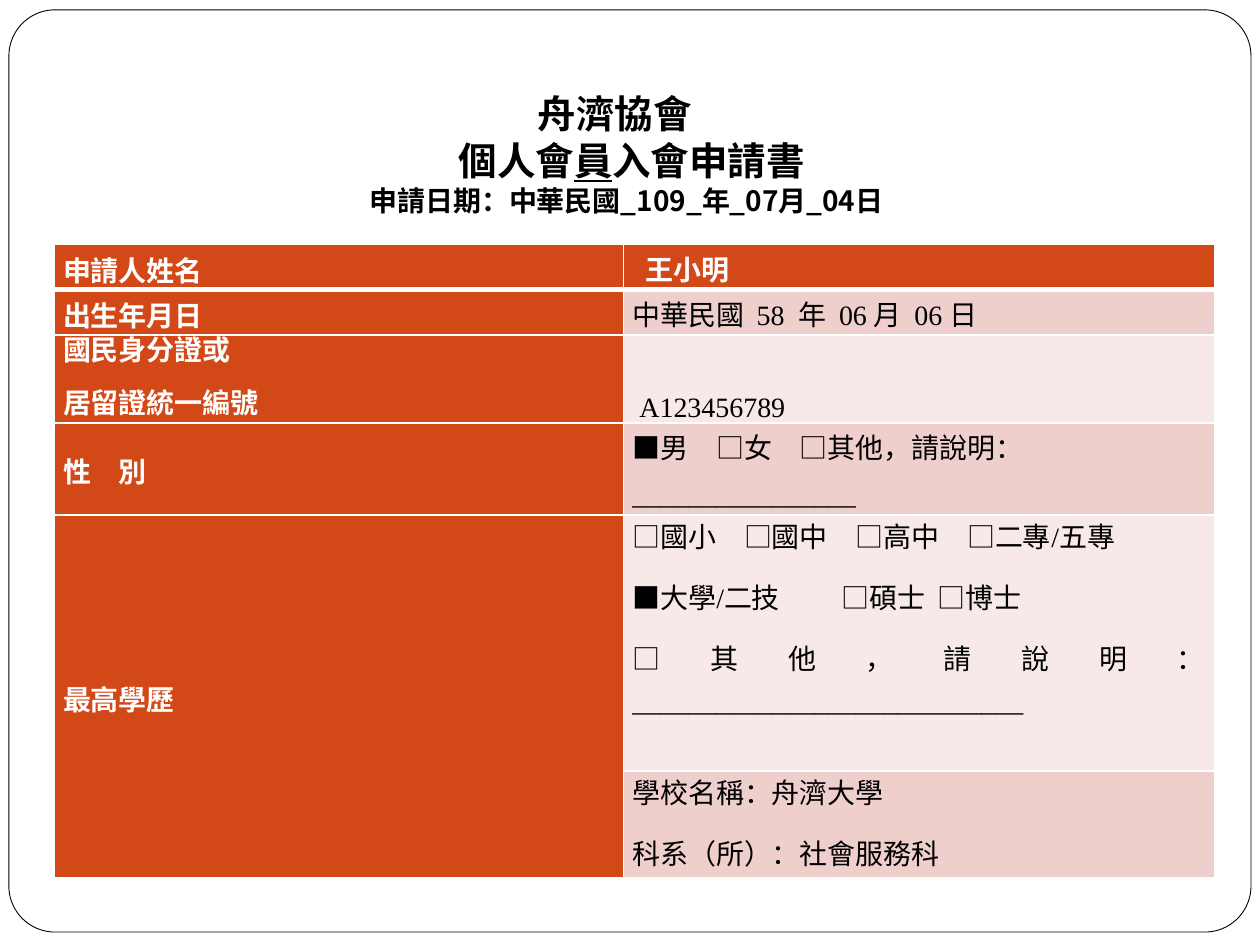
import pptx
import pptx.dml.color
import pptx.enum.shapes
import pptx.enum.text
import pptx.oxml
import pptx.oxml.ns
import pptx.util

Cm, Pt = pptx.util.Cm, pptx.util.Pt
ALIGN = pptx.enum.text.PP_ALIGN
ANCHOR = pptx.enum.text.MSO_ANCHOR
HEAD, DARK, LIGHT = "D34817", "EFCFCC", "F7E9E8"


def color(value):
    return pptx.dml.color.RGBColor.from_string(value)


class FormSlide:
    latin, asian = "Times New Roman", "Noto Sans CJK SC"

    def __init__(self, prs):
        self.slide = prs.slides.add_slide(prs.slide_layouts[5])

    def apply(self, obj, **values):
        for name, value in values.items():
            setattr(obj, name, value)

    def run(self, p, text, ink="000000", latin=None, **values):
        r = p.add_run()
        r.text = text
        self.apply(r.font, name=latin or self.latin, **values)
        r.font.color.rgb = color(ink)
        ea = pptx.oxml.parse_xml(
            f'<a:ea {pptx.oxml.ns.nsdecls("a")} typeface="{self.asian}"/>')
        r.font._element.find(pptx.oxml.ns.qn("a:latin")).addnext(ea)

    def frame(self, left, top, width, height, radius):
        sp = self.slide.shapes.add_shape(
            pptx.enum.shapes.MSO_SHAPE.ROUNDED_RECTANGLE,
            Cm(left), Cm(top), Cm(width), Cm(height))
        sp.adjustments[0] = radius
        sp.shadow.inherit = False
        sp.fill.solid()
        sp.fill.fore_color.rgb = color("FFFFFF")
        sp.line.color.rgb = color("000000")
        sp.line.width = Pt(0.5)

    def title(self, left, top, width, height, lines):
        sp = self.slide.shapes.title
        self.apply(sp, left=Cm(left), top=Cm(top), width=Cm(width), height=Cm(height))
        tf = sp.text_frame
        self.apply(tf, word_wrap=True, vertical_anchor=ANCHOR.BOTTOM,
                   auto_size=pptx.enum.text.MSO_AUTO_SIZE.NONE)
        for i, (size, spacing, indent, parts) in enumerate(lines):
            p = tf.add_paragraph() if i else tf.paragraphs[0]
            self.apply(p, alignment=ALIGN.CENTER, line_spacing=Pt(spacing),
                       space_before=Pt(0))
            p._p.get_or_add_pPr().set("marL", str(Cm(indent)))
            for text, underline in parts:
                self.run(p, text, latin=self.asian, size=Pt(size), bold=True,
                         underline=underline)

    def borders(self, cell, **widths):
        tc_pr = cell._tc.get_or_add_tcPr()
        for i, side in enumerate("LRTB"):
            tc_pr.insert(i, pptx.oxml.parse_xml(
                f'<a:ln{side} {pptx.oxml.ns.nsdecls("a")} w="{Pt(widths.get(side, 1))}">'
                '<a:solidFill><a:srgbClr val="FFFFFF"/></a:solidFill>'
                f'</a:ln{side}>'))

    def cell(self, cell, lines, fill, spacing, align=ALIGN.JUSTIFY,
             anchor=ANCHOR.MIDDLE, inset=0.18):
        self.apply(cell, vertical_anchor=anchor, margin_left=Cm(inset),
                   margin_right=Cm(0.18), margin_top=0, margin_bottom=0)
        cell.fill.solid()
        cell.fill.fore_color.rgb = color(fill)
        heading = fill == HEAD
        tf = cell.text_frame
        for i, text in enumerate(lines):
            p = tf.add_paragraph() if i else tf.paragraphs[0]
            self.apply(p, alignment=align, line_spacing=Pt(spacing),
                       space_before=Pt(6), space_after=Pt(6))
            self.run(p, text, "FFFFFF" if heading else "000000",
                     size=Pt(16), bold=heading)

    def table(self, left, top, widths, heights):
        tbl = self.slide.shapes.add_table(
            len(heights), len(widths), Cm(left), Cm(top),
            Cm(sum(widths)), Cm(sum(heights))).table
        tbl.horz_banding = False
        for column, width in zip(tbl.columns, widths):
            column.width = Cm(width)
        for row, height in zip(tbl.rows, heights):
            row.height = Cm(height)
        for i, row in enumerate(tbl.rows):
            for cell in row.cells:
                self.borders(cell, **({"B": 3} if i == 0 else {"T": 3} if i == 1 else {}))
        return tbl


def main():
    prs = pptx.Presentation()
    prs.slide_width, prs.slide_height = Cm(25.4), Cm(19.05)
    form = FormSlide(prs)

    # Page frame, behind the title
    form.frame(0.18, 0.2, 25.04, 18.59, 0.05)
    tree = form.slide.shapes._spTree
    tree.append(form.slide.shapes.title._element)

    # Heading
    form.title(4.29, -0.2, 16.2, 4.7, [
        (22, 26.6, 0, [("舟濟協會", False)]),
        (22, 26.6, 0.69, [("個人會", False), ("員", True), ("入會申請書", False)]),
        (16, 19.4, 0.48, [("申請日期：中華民國_109_年_07月_04日", False)]),
    ])

    # Application form: label column, then answers
    tbl = form.table(1.09, 4.93, [11.48, 11.91], [0.91, 0.91, 1.78, 1.85, 5.16, 2.16])
    tbl.cell(4, 0).merge(tbl.cell(5, 0))
    labels = [
        (["申請人姓名"], 25),
        (["出生年月日"], 25),
        (["國民身分證或", "居留證統一編號"], 18),
        (["性　別"], 25),
        (["最高學歷"], 25),
    ]
    for i, (lines, spacing) in enumerate(labels):
        form.cell(tbl.cell(i, 0), lines, HEAD, spacing)

    top = {"anchor": ANCHOR.TOP}
    answers = [
        (["王小明"], HEAD, 25, {**top, "inset": 0.45}),
        (["中華民國  58  年  06 月  06 日"], DARK, 25, top),
        (["A123456789"], LIGHT, 18, {"anchor": ANCHOR.BOTTOM, "inset": 0.32}),
        (["■男　□女　□其他，請說明：" + "_" * 16], DARK, 25,
         {**top, "align": ALIGN.LEFT}),
        (["□國小　□國中　□高中　□二專/五專",
          "■大學/二技　　 □碩士  □博士",
          "□其他，請說明：" + "_" * 28], LIGHT, 23, top),
        (["學校名稱：舟濟大學", "科系（所）：社會服務科"], DARK, 23, top),
    ]
    for i, (lines, fill, spacing, layout) in enumerate(answers):
        form.cell(tbl.cell(i, 1), lines, fill, spacing, **layout)

    prs.save("out.pptx")


if __name__ == "__main__":
    main()
